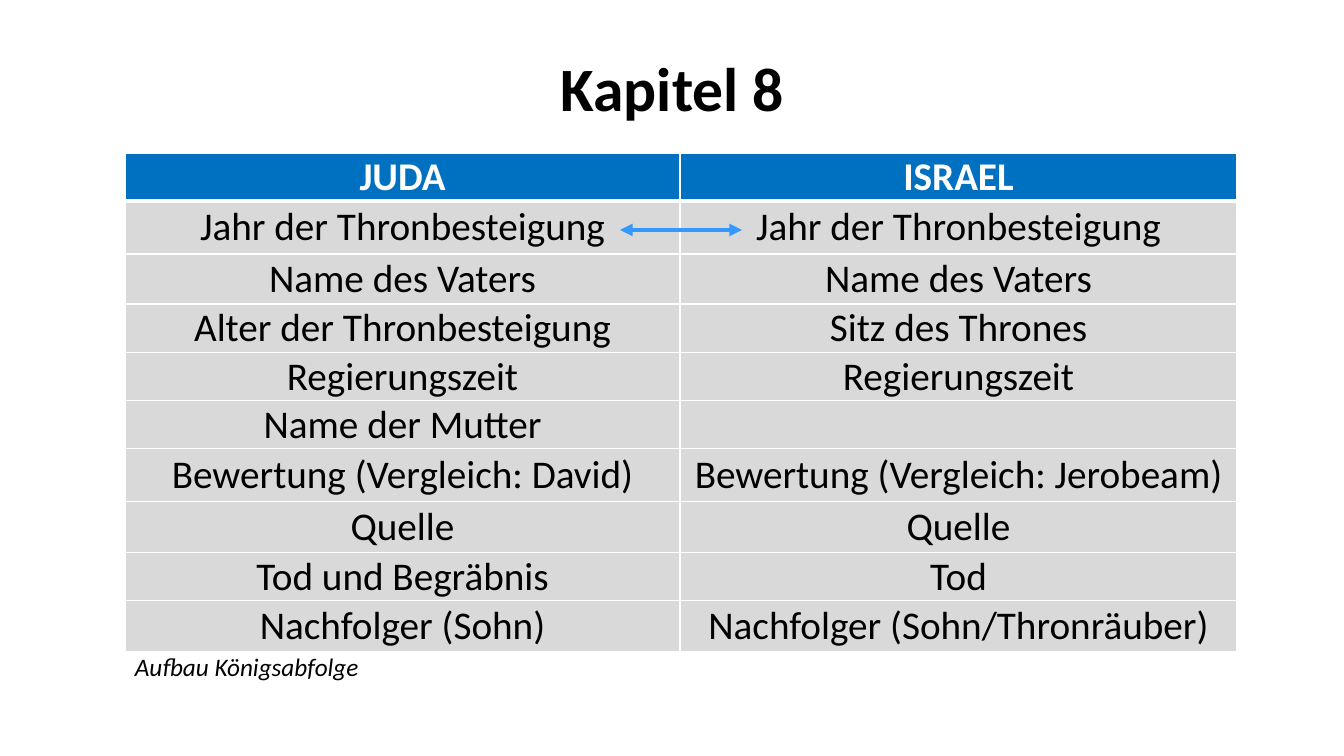
import dataclasses
import typing

import lxml.etree
import pptx
import pptx.dml.color
import pptx.enum.shapes
import pptx.enum.text
import pptx.oxml.ns
import pptx.util

SCALE = 914400 / 100.8
ALIGN = pptx.enum.text.PP_ALIGN
ANCHOR = pptx.enum.text.MSO_ANCHOR
FIT = pptx.enum.text.MSO_AUTO_SIZE
WHITE, BLACK, BLUE, GREY, SKY = "FFFFFF", "000000", "0070C0", "D9D9D9", "3399FF"
COLS = (555, 557)


@dataclasses.dataclass(frozen=True)
class Box:
    left: int
    top: int
    width: int
    height: int


@dataclasses.dataclass(frozen=True)
class Row:
    height: int
    juda: str
    israel: str


ROWS = (
    Row(48, "JUDA", "ISRAEL"),
    Row(53, "Jahr der Thronbesteigung", "Jahr der Thronbesteigung"),
    Row(50, "Name des Vaters", "Name des Vaters"),
    Row(49, "Alter der Thronbesteigung", "Sitz des Thrones"),
    Row(48, "Regierungszeit", "Regierungszeit"),
    Row(48, "Name der Mutter", ""),
    Row(53, "Bewertung (Vergleich: David)", "Bewertung (Vergleich: Jerobeam)"),
    Row(51, "Quelle", "Quelle"),
    Row(48, "Tod und Begräbnis", "Tod"),
    Row(51, "Nachfolger (Sohn)", "Nachfolger (Sohn/Thronräuber)"),
)
TABLE = Box(125, 153, sum(COLS), sum(row.height for row in ROWS))
TITLE = Box(93, 40, 1159, 90)
NOTE = Box(125, 646, 246, 40)


def px(size: int) -> pptx.util.Emu:
    return pptx.util.Emu(round(size * SCALE))


def tint(code: str) -> pptx.dml.color.RGBColor:
    return pptx.dml.color.RGBColor.from_string(code)


def span(box: Box) -> dict[str, int]:
    return {key: px(size) for key, size in dataclasses.asdict(box).items()}


def put(item: typing.Any, style: dict[str, typing.Any]) -> None:
    for key, value in style.items():
        setattr(item, key, value)


def sub(node: typing.Any, tag: str, **attrs: str) -> typing.Any:
    return lxml.etree.SubElement(node, pptx.oxml.ns.qn(tag), attrs)


def write(frame: typing.Any, text: str, size: int, color: str,
          form: dict[str, typing.Any], **font: bool) -> None:
    para = frame.paragraphs[0]
    put(para, form)
    run = para.add_run()
    run.text = text
    put(run.font, {"name": "Calibri", "size": pptx.util.Pt(size), **font})
    run.font.color.rgb = tint(color)


def edge(cell: typing.Any, widths: dict[str, int]) -> None:
    props = cell._tc.get_or_add_tcPr()
    for side, width in widths.items():
        line = sub(props, f"a:ln{side}", w=str(pptx.util.Pt(width)))
        sub(sub(line, "a:solidFill"), "a:srgbClr", val=WHITE)


def draw_cell(cell: typing.Any, text: str, index: int) -> None:
    head = index == 0
    edge(cell, {"L": 1, "R": 1, "T": 3 if index == 1 else 1, "B": 3 if head else 1})
    put(cell, {"margin_left": px(14), "margin_right": px(14), "margin_top": 0,
               "margin_bottom": 0, "vertical_anchor": ANCHOR.MIDDLE})
    cell.fill.solid()
    cell.fill.fore_color.rgb = tint(BLUE if head else GREY)
    if text:
        write(cell.text_frame, text, 28, WHITE if head else BLACK,
              {"alignment": ALIGN.CENTER}, bold=head)


def draw_table(shapes: typing.Any) -> None:
    table = shapes.add_table(len(ROWS), len(COLS), **span(TABLE)).table
    for col, width in zip(table.columns, COLS):
        col.width = px(width)
    for index, row in enumerate(ROWS):
        table.rows[index].height = px(row.height)
        for col, text in enumerate((row.juda, row.israel)):
            draw_cell(table.cell(index, col), text, index)


def draw_title(title: typing.Any) -> None:
    put(title, span(TITLE))
    put(title.text_frame, {"word_wrap": True, "auto_size": FIT.NONE,
                           "vertical_anchor": ANCHOR.BOTTOM})
    write(title.text_frame, "Kapitel 8", 44, BLACK,
          {"alignment": ALIGN.CENTER, "line_spacing": 0.9}, bold=True)


def draw_note(shapes: typing.Any) -> None:
    frame = shapes.add_textbox(**span(NOTE)).text_frame
    put(frame, {"word_wrap": False, "auto_size": FIT.SHAPE_TO_FIT_TEXT})
    write(frame, "Aufbau Königsabfolge", 18, BLACK, {"alignment": ALIGN.LEFT}, italic=True)


def draw_arrow(shapes: typing.Any) -> None:
    kind = pptx.enum.shapes.MSO_CONNECTOR.STRAIGHT
    arrow = shapes.add_connector(kind, px(620), px(230), px(742), px(230))
    arrow.line.color.rgb = tint(SKY)
    arrow.line.width = pptx.util.Pt(3)
    line = arrow.line._get_or_add_ln()
    for end in ("a:headEnd", "a:tailEnd"):
        sub(line, end, type="triangle")
    sub(arrow._element.spPr, "a:effectLst")


def main() -> None:
    deck = pptx.Presentation()
    put(deck, {"slide_width": px(1344), "slide_height": px(756)})
    slide = deck.slides.add_slide(deck.slide_layouts[5])
    draw_title(slide.shapes.title)
    draw_table(slide.shapes)
    draw_note(slide.shapes)
    draw_arrow(slide.shapes)
    deck.save("out.pptx")


if __name__ == "__main__":
    main()
